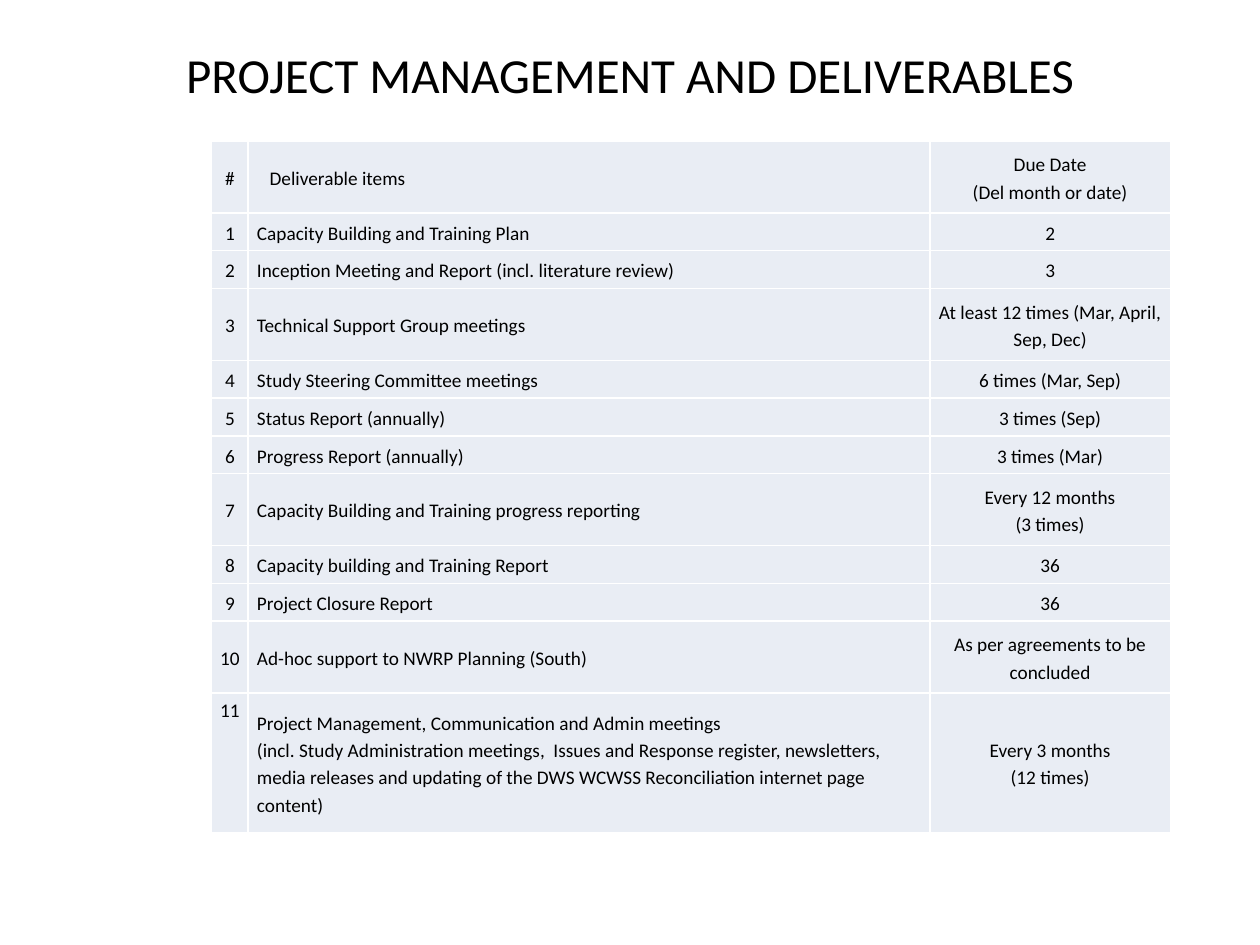
import pptx
import pptx.util
import pptx.dml.color
import pptx.enum.text
import pptx.oxml
import pptx.oxml.ns

Inches, Pt = pptx.util.Inches, pptx.util.Pt
RGB = pptx.dml.color.RGBColor.from_string
ALIGN = pptx.enum.text.PP_ALIGN
ANCHOR = pptx.enum.text.MSO_ANCHOR

THEME = {
    "font": "Calibri", "text": "000000", "cell": "E9EDF4", "border": "FFFFFF",
    "title_size": 28, "table_size": 11, "border_width": 1,
}

SINGLE, DOUBLE, TALL = 0.3, 0.57, 1.11
ROWS = [
    (DOUBLE, "#", "Deliverable items", "Due Date\n(Del month or date)"),
    (SINGLE, "1", "Capacity Building and Training Plan", "2"),
    (SINGLE, "2", "Inception Meeting and Report (incl. literature review)", "3"),
    (DOUBLE, "3", "Technical Support Group meetings",
     "At least 12 times (Mar, April, Sep, Dec)"),
    (SINGLE, "4", "Study Steering Committee meetings", "6 times (Mar, Sep)"),
    (SINGLE, "5", "Status Report (annually)", "3 times (Sep)"),
    (SINGLE, "6", "Progress Report (annually)", "3 times (Mar)"),
    (DOUBLE, "7", "Capacity Building and Training progress reporting",
     "Every 12 months\n(3 times)"),
    (SINGLE, "8", "Capacity building and Training Report", "36"),
    (SINGLE, "9", "Project Closure Report", "36"),
    (DOUBLE, "10", "Ad-hoc support to NWRP Planning (South)",
     "As per agreements to be concluded"),
    (TALL, "11",
     "Project Management, Communication and Admin meetings\n"
     "(incl. Study Administration meetings,  Issues and Response register, "
     "newsletters, media releases and updating of the DWS WCWSS Reconciliation "
     "internet page content)",
     "Every 3 months\n(12 times)"),
]
# width, side margin, alignment
COLUMNS = [(0.29, 0.02, ALIGN.CENTER), (5.41, 0.07, ALIGN.LEFT), (1.91, 0.07, ALIGN.CENTER)]


def format_paragraph(p, size, **formats):
    p.font.name = THEME["font"]
    p.font.size = Pt(size)
    p.font.color.rgb = RGB(THEME["text"])
    for name, value in formats.items():
        setattr(p, name, value)


def add_borders(cell):
    tcPr = cell._tc.get_or_add_tcPr()
    for i, side in enumerate("LRTB"):
        tcPr.insert(i, pptx.oxml.parse_xml(
            f'<a:ln{side} {pptx.oxml.ns.nsdecls("a")} w="{Pt(THEME["border_width"])}">'
            f'<a:solidFill><a:srgbClr val="{THEME["border"]}"/></a:solidFill></a:ln{side}>'))


prs = pptx.Presentation()
prs.slide_width, prs.slide_height = Inches(10), Inches(7.5)
s = prs.slides.add_slide(prs.slide_layouts.get_by_name("Title Only"))

title = s.shapes.title
title.left, title.top, title.width, title.height = map(Inches, (0.5, 0.3, 9, 1.25))
tf = title.text_frame
tf.text = "PROJECT MANAGEMENT AND DELIVERABLES"
tf.vertical_anchor = ANCHOR.TOP
format_paragraph(tf.paragraphs[0], THEME["title_size"], alignment=ALIGN.CENTER)

width = sum(column[0] for column in COLUMNS)
height = sum(row[0] for row in ROWS)
table = s.shapes.add_table(len(ROWS), len(COLUMNS), Inches(1.68), Inches(1.12),
                           Inches(width), Inches(height)).table
table.first_row = table.horz_banding = False
for column, (column_width, _, _) in zip(table.columns, COLUMNS):
    column.width = Inches(column_width)

for i, (row_height, *texts) in enumerate(ROWS):
    table.rows[i].height = Inches(row_height)
    for j, (text, (_, margin, alignment)) in enumerate(zip(texts, COLUMNS)):
        cell = table.cell(i, j)
        cell.text = text
        formats = {
            "vertical_anchor": ANCHOR.MIDDLE,
            "margin_left": Inches(margin), "margin_right": Inches(margin),
            "margin_top": Inches(0.02), "margin_bottom": Inches(0.02),
        }
        for name, value in formats.items():
            setattr(cell, name, value)
        cell.fill.solid()
        cell.fill.fore_color.rgb = RGB(THEME["cell"])
        add_borders(cell)
        for p in cell.text_frame.paragraphs:
            format_paragraph(p, THEME["table_size"], alignment=alignment, line_spacing=1.15)

table.cell(0, 1).margin_left = Inches(0.17)
table.cell(len(ROWS) - 1, 0).vertical_anchor = ANCHOR.TOP

prs.save("out.pptx")
